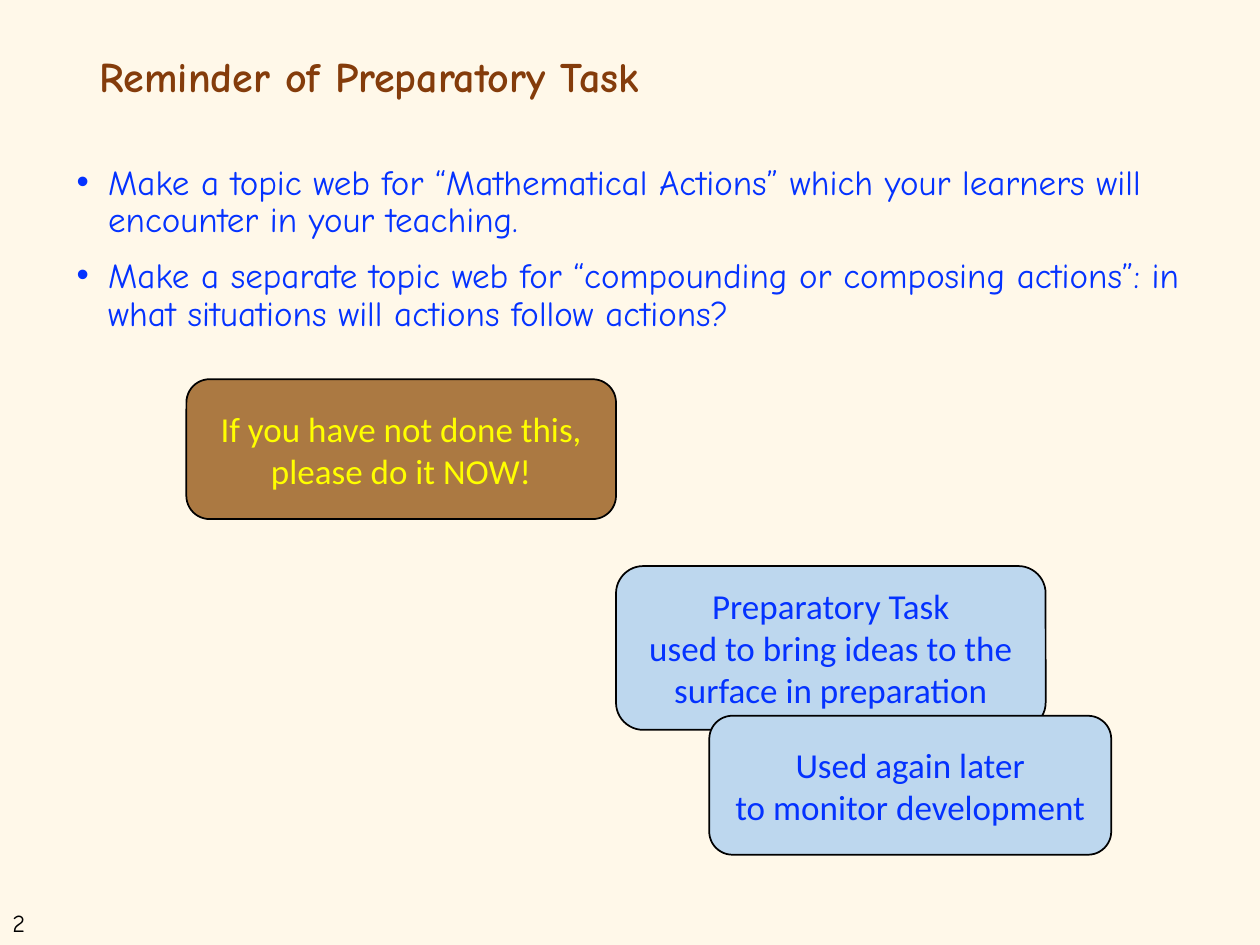
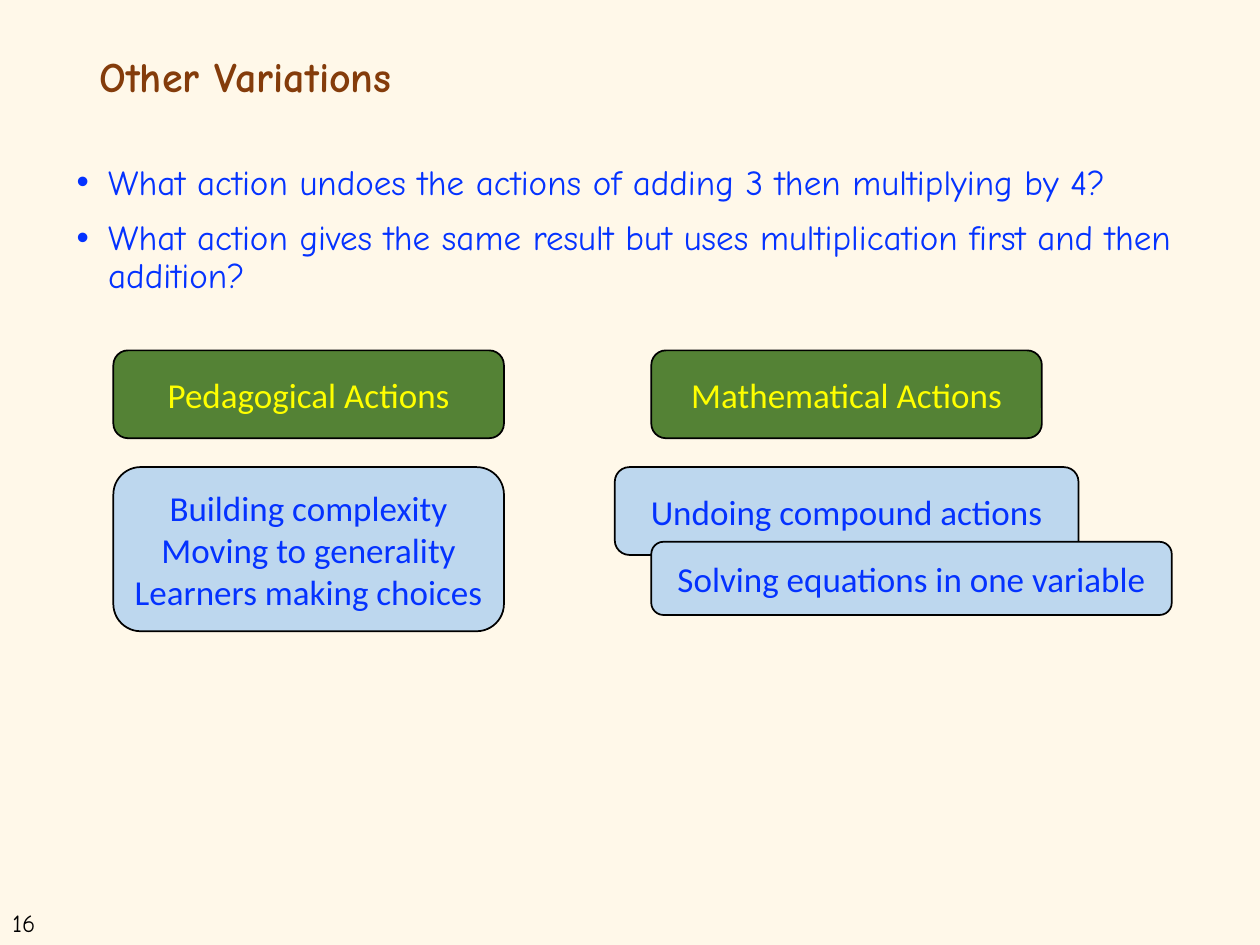
from typing import NamedTuple

from lxml import etree
from pptx import Presentation
from pptx.dml.color import RGBColor
from pptx.enum.shapes import MSO_SHAPE as Shape
from pptx.enum.text import MSO_ANCHOR as Anchor, PP_ALIGN as Align
from pptx.oxml.ns import qn
from pptx.util import Pt

CREAM = RGBColor(0xFF, 0xF8, 0xE9)
BROWN = RGBColor(0x84, 0x3C, 0x0B)
TAN = RGBColor(0xAB, 0x79, 0x42)
GREEN = RGBColor(0x54, 0x82, 0x35)
PALE_BLUE = RGBColor(0xBD, 0xD7, 0xEE)
BLUE = RGBColor(0x04, 0x32, 0xFF)
YELLOW = RGBColor(0xFF, 0xFF, 0x00)
BLACK = RGBColor(0, 0, 0)

HAND_FONT = "Comic Neue"
CARD_FONT = "Calibri"
TEXT_SIZE = 20
BULLET_INDENT = 18


class Box(NamedTuple):
    """Left, top, width and height in points."""
    left: float
    top: float
    width: float
    height: float

    def inner(self, left, top, width, height):
        """Return a box whose corner is measured from this one."""
        return Box(self.left + left, self.top + top, width, height)

    def lengths(self):
        """Return the four lengths for python-pptx."""
        return [Pt(value) for value in self]


PAGE = Box(0, 0, 720, 540)
TITLE = Box(49.7, 28.8, 620.6, 51.1)
NUMBER = Box(0, 515.5, 36.7, 24.5)
QUESTIONS = Box(36.7, 90.7, 653.8, 116)
REMINDERS = Box(106.5, 216.7, 528.5, 271.5)
PEDAGOGY = Box(64.8, 200.2, 223.2, 160.5)
MATHEMATICS = Box(372.2, 200.2, 318.3, 150.5)


def style_runs(para, font_name, size, color, bold=False):
    """Give every run of a paragraph the same look."""
    for span in para.runs:
        span.font.name = font_name
        span.font.size = Pt(size)
        span.font.bold = bold
        span.font.color.rgb = color


def add_text(slide, box, text, size, color, bold=False):
    """Add a wrapped text box in the handwritten font and return its paragraphs."""
    frame = slide.shapes.add_textbox(*box.lengths()).text_frame
    frame.word_wrap = True
    frame.text = text
    for para in frame.paragraphs:
        style_runs(para, HAND_FONT, size, color, bold)
    return frame.paragraphs


def add_bullets(slide, box, items):
    """Add a bulleted list with hanging indents."""
    paras = add_text(slide, box, "\n".join(items), TEXT_SIZE, BLUE)
    for index, para in enumerate(paras):
        para.line_spacing = 0.9
        para.space_before = Pt(10 if index else 0)
        properties = para._p.get_or_add_pPr()
        properties.set("marL", str(Pt(BULLET_INDENT)))
        properties.set("indent", str(-Pt(BULLET_INDENT)))
        etree.SubElement(properties, qn("a:buFont")).set("typeface", "Arial")
        etree.SubElement(properties, qn("a:buChar")).set("char", "•")


def add_card(slide, box, text, fill=PALE_BLUE, color=BLUE):
    """Add a rounded card with centred text."""
    card = slide.shapes.add_shape(Shape.ROUNDED_RECTANGLE, *box.lengths())
    card.shadow.inherit = False
    card.fill.solid()
    card.fill.fore_color.rgb = fill
    card.line.color.rgb = BLACK
    card.line.width = Pt(1)
    frame = card.text_frame
    frame.word_wrap = True
    frame.vertical_anchor = Anchor.MIDDLE
    frame.text = text
    for para in frame.paragraphs:
        para.alignment = Align.CENTER
        style_runs(para, CARD_FONT, TEXT_SIZE, color)


def add_page(deck, number, title, questions):
    """Add a slide with its background, number, title and bullets."""
    slide = deck.slides.add_slide(deck.slide_layouts[6])
    slide.background.fill.solid()
    slide.background.fill.fore_color.rgb = CREAM
    add_text(slide, NUMBER, str(number), 14, BLACK)
    heading = add_text(slide, TITLE, title, 24, BROWN, bold=True)[0]
    heading.line_spacing = 0.9
    add_bullets(slide, QUESTIONS, questions)
    return slide


def add_reminders(slide, box):
    """Place the staggered cards about the preparatory task."""
    add_card(slide, box.inner(0, 0, 245.5, 79.9),
             "If you have not done this,\vplease do it NOW!", TAN, YELLOW)
    add_card(slide, box.inner(245.5, 106.8, 245.5, 93.6),
             "Preparatory Task\vused to bring ideas to the surface in preparation")
    add_card(slide, box.inner(298.8, 192.3, 229.7, 79.4),
             "Used again later\vto monitor development")


def add_heading_card(slide, box, text):
    """Place the green heading card of a column."""
    add_card(slide, box.inner(0, 0, 223.2, 50.2), text, GREEN, YELLOW)


def add_pedagogy(slide, box):
    """Place the column of pedagogical actions."""
    add_heading_card(slide, box, "Pedagogical Actions")
    add_card(slide, box.inner(0, 66.7, 223.2, 93.8),
             "Building complexity\nMoving to generality\vLearners making choices")


def add_mathematics(slide, box):
    """Place the column of mathematical actions."""
    add_heading_card(slide, box, "Mathematical Actions")
    add_card(slide, box.inner(0, 66.7, 265, 50.2).inner(-20.9, 0, 265, 50.2),
             "Undoing compound actions")
    add_card(slide, box.inner(0, 109.4, 297.4, 41.8),
             "Solving equations in one variable")


def main():
    """Build and save the deck."""
    deck = Presentation()
    deck.slide_width, deck.slide_height = Pt(PAGE.width), Pt(PAGE.height)

    reminder = add_page(deck, 2, "Reminder of Preparatory Task", [
        "Make a topic web for “Mathematical Actions” which your learners will "
        "encounter in your teaching.",
        "Make a separate topic web for “compounding or composing actions”: in "
        "what situations will actions follow actions?"])
    add_reminders(reminder, REMINDERS)

    variations = add_page(deck, 16, "Other Variations", [
        "What action undoes the actions of adding 3 then multiplying by 4?",
        "What action gives the same result but uses multiplication first and "
        "then addition?"])
    add_pedagogy(variations, PEDAGOGY)
    add_mathematics(variations, MATHEMATICS)

    deck.save("out.pptx")


if __name__ == "__main__":
    main()
